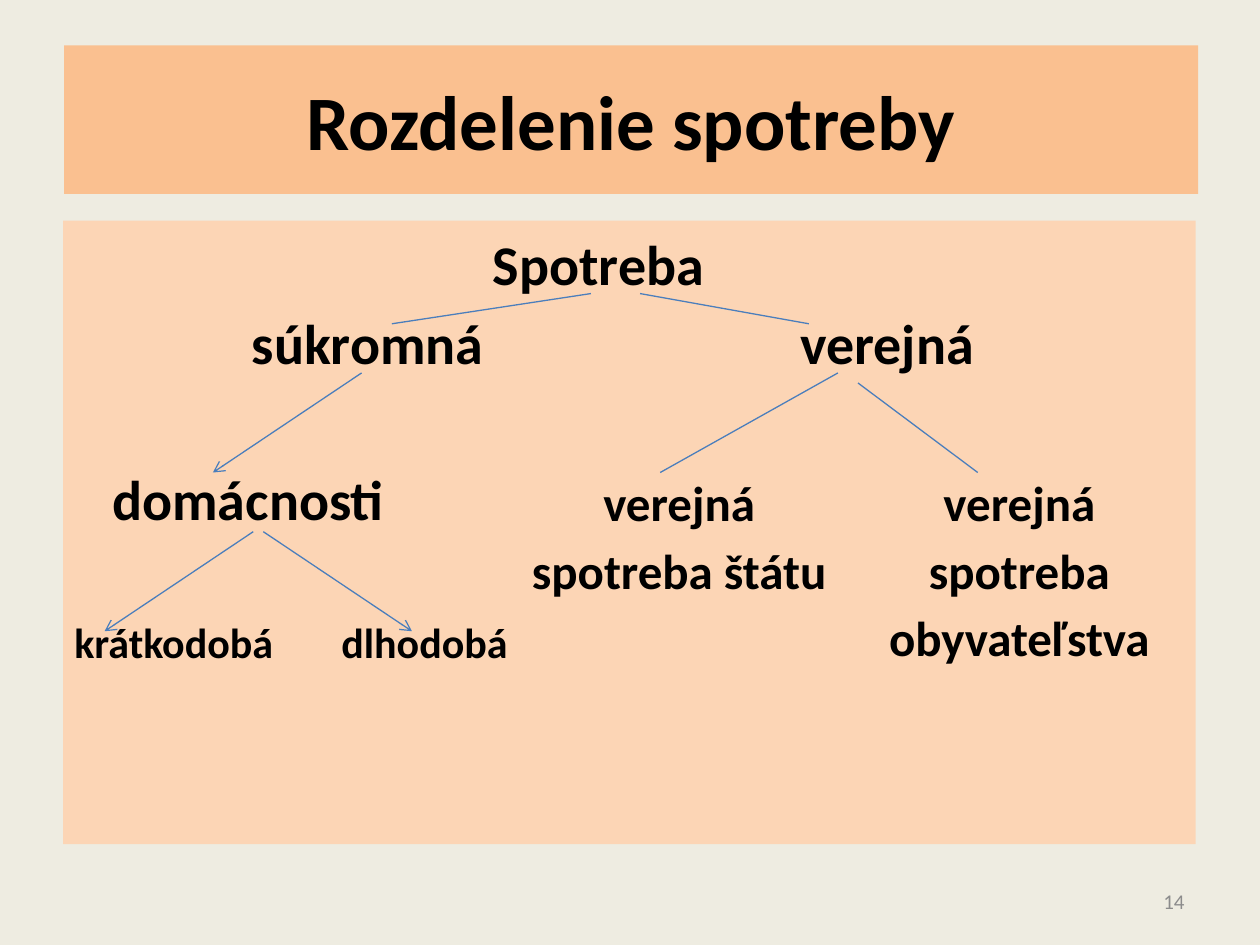
from lxml import etree
from pptx import Presentation
from pptx.dml.color import RGBColor
from pptx.enum.shapes import MSO_CONNECTOR, MSO_SHAPE
from pptx.enum.text import MSO_ANCHOR, PP_ALIGN
from pptx.oxml.ns import qn
from pptx.util import Inches, Pt

RECTANGLE = MSO_SHAPE.RECTANGLE
STRAIGHT = MSO_CONNECTOR.STRAIGHT
MIDDLE, TOP = MSO_ANCHOR.MIDDLE, MSO_ANCHOR.TOP
CENTER, RIGHT = PP_ALIGN.CENTER, PP_ALIGN.RIGHT
TITLE_ONLY = 5
FONT = "Calibri"
COLORS = {
    "background": "EEECE1",
    "title": "FAC090",
    "panel": "FCD5B5",
    "text": "000000",
    "line": "4B7EBC",
    "number": "8C8C8C",
}
LABELS = [
    ("Spotreba", 4.25, 0.07, 2.2, 32),
    ("súkromná", 2.42, 0.7, 2.2, 32),
    ("verejná", 6.54, 0.7, 2.2, 32),
    ("domácnosti", 1.47, 1.94, 2.6, 32),
    ("verejná\nspotreba štátu", 4.89, 2, 2.8, 28),
    ("verejná\nspotreba\nobyvateľstva", 7.59, 2, 2.4, 28),
    ("krátkodobá", 0.88, 3.14, 1.7, 24),
    ("dlhodobá", 2.87, 3.14, 1.7, 24),
]
BRANCHES = [
    (4.19, 0.58, 2.61, 0.82, False),
    (4.58, 0.58, 5.92, 0.82, False),
    (2.37, 1.21, 1.19, 2, True),
    (6.15, 1.21, 4.74, 2, False),
    (6.31, 1.29, 7.26, 2, False),
    (1.59, 2.47, 2.77, 3.26, True),
    (1.51, 2.47, 0.33, 3.26, True),
]


def color(name):
    """Return the named palette colour."""
    return RGBColor.from_string(COLORS[name])


def write(shape, text, size, tint="text", bold=True, align=CENTER, anchor=MIDDLE):
    """Set and format all text of a shape."""
    frame = shape.text_frame
    frame.text = text
    frame.word_wrap = True
    frame.vertical_anchor = anchor
    for index, paragraph in enumerate(frame.paragraphs):
        paragraph.alignment = align
        paragraph.space_before = Pt(5 if index else 0)
        for run in paragraph.runs:
            run.font.name = FONT
            run.font.size = Pt(size)
            run.font.bold = bold
            run.font.color.rgb = color(tint)


def add_title(slide, left, top, width, height):
    """Place the title placeholder as a filled band."""
    title = slide.shapes.title
    title.left, title.top = Inches(left), Inches(top)
    title.width, title.height = Inches(width), Inches(height)
    title.fill.solid()
    title.fill.fore_color.rgb = color("title")
    write(title, "Rozdelenie spotreby", 44)


def add_label(slide, text, center, top, width, size):
    """Add a tree label centred on a horizontal position."""
    lines = text.count("\n") + 1
    label = slide.shapes.add_textbox(
        Inches(center - width / 2), Inches(top), Inches(width), Inches(lines * size / 52)
    )
    frame = label.text_frame
    frame.margin_left = frame.margin_right = frame.margin_top = frame.margin_bottom = 0
    write(label, text, size, anchor=TOP)


def add_branch(slide, start_x, start_y, end_x, end_y, arrow):
    """Add a thin branch, with an open arrowhead at its end if asked."""
    branch = slide.shapes.add_connector(
        STRAIGHT, Inches(start_x), Inches(start_y), Inches(end_x), Inches(end_y)
    )
    branch.line.color.rgb = color("line")
    branch.line.width = Pt(0.75)
    if arrow:
        etree.SubElement(branch.line._get_or_add_ln(), qn("a:tailEnd"), type="arrow")
    etree.SubElement(branch._element.spPr, qn("a:effectLst"))


def add_tree(slide, left, top, width, height):
    """Draw the panel with the consumption tree inside it."""
    panel = slide.shapes.add_shape(
        RECTANGLE, Inches(left), Inches(top), Inches(width), Inches(height)
    )
    panel.shadow.inherit = False
    panel.fill.solid()
    panel.fill.fore_color.rgb = color("panel")
    panel.line.fill.background()
    for text, center, offset, label_width, size in LABELS:
        add_label(slide, text, left + center, top + offset, label_width, size)
    for start_x, start_y, end_x, end_y, arrow in BRANCHES:
        add_branch(slide, left + start_x, top + start_y, left + end_x, top + end_y, arrow)


def add_slide_number(slide, left, top, width, height):
    """Add the slide number at the lower right."""
    number = slide.shapes.add_textbox(
        Inches(left), Inches(top), Inches(width), Inches(height)
    )
    write(number, "14", 12, tint="number", bold=False, align=RIGHT)


def main():
    """Build and save the presentation."""
    presentation = Presentation()
    presentation.slide_width, presentation.slide_height = Inches(10), Inches(7.5)
    slide = presentation.slides.add_slide(presentation.slide_layouts[TITLE_ONLY])
    slide.background.fill.solid()
    slide.background.fill.fore_color.rgb = color("background")
    add_title(slide, 0.51, 0.36, 9, 1.18)
    add_tree(slide, 0.5, 1.75, 8.99, 4.95)
    add_slide_number(slide, 7.17, 6.95, 2.33, 0.4)
    presentation.save("out.pptx")


if __name__ == "__main__":
    main()
